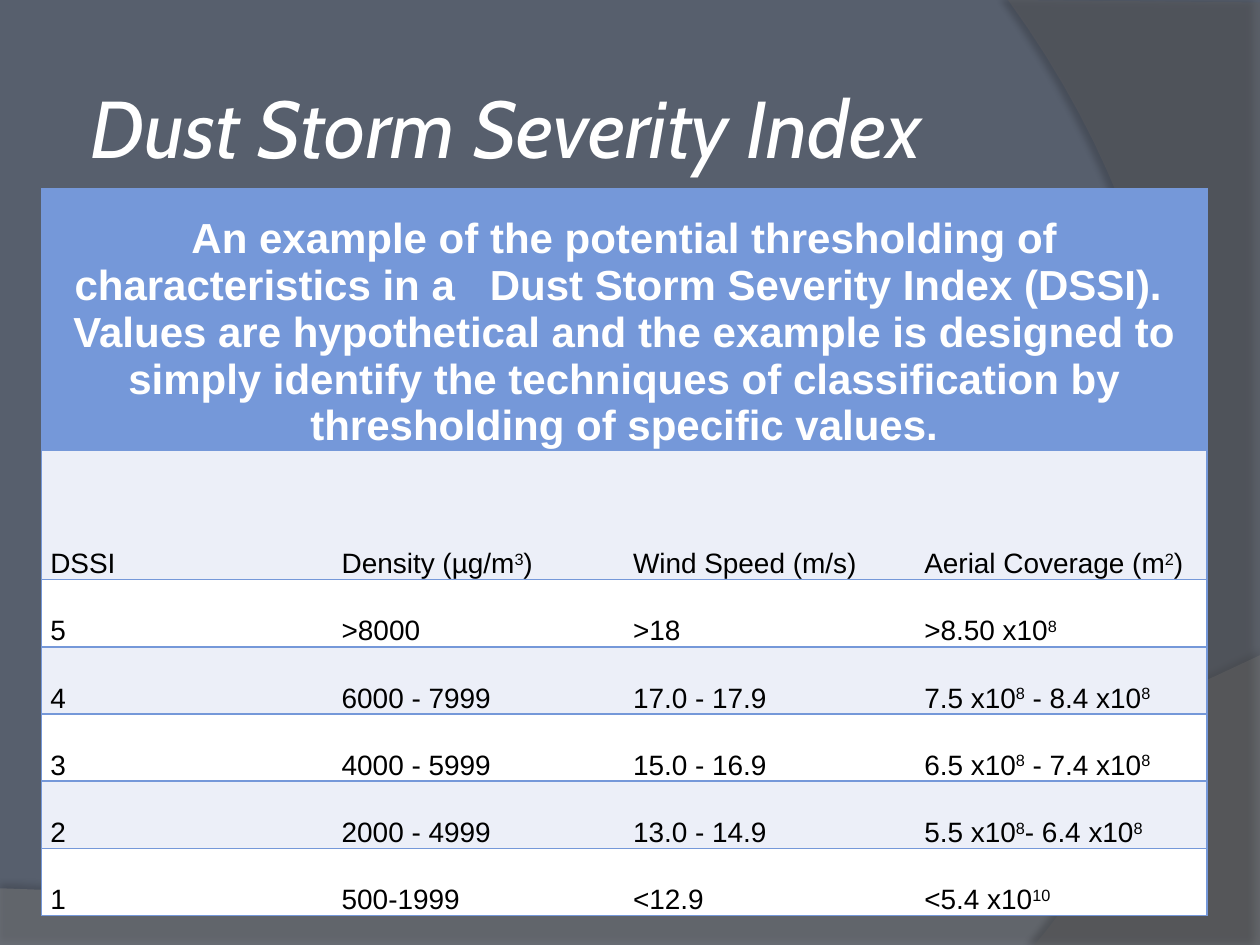
from lxml import etree
from pptx import Presentation
from pptx.dml.color import RGBColor
from pptx.enum.text import MSO_ANCHOR, PP_ALIGN
from pptx.oxml.ns import qn
from pptx.util import Inches, Pt

MIDDLE, BOTTOM = MSO_ANCHOR.MIDDLE, MSO_ANCHOR.BOTTOM
CENTER, LEFT = PP_ALIGN.CENTER, PP_ALIGN.LEFT

COLORS = {
    "background": "575F6D", "wave": "7F7F7F", "arc": "5E5E5E",
    "shadow": "000000", "accent": "7598D9", "band": "ECEFF8",
    "white": "FFFFFF", "text": "000000",
}
NO_STYLE = "{2D5ABB26-0587-4C30-8999-92F81FD0307C}"
HEADING = (
    "An example of the potential thresholding of characteristics in a   "
    "Dust Storm Severity Index (DSSI).  Values are hypothetical and the "
    "example is designed to simply identify the techniques of classification "
    "by thresholding of specific values."
)
ROWS = [
    ["DSSI", "Density (µg/m^3^)", "Wind Speed (m/s)", "Aerial Coverage (m^2^)"],
    ["5", ">8000", ">18", ">8.50 x10^8^"],
    ["4", "6000 - 7999", "17.0 - 17.9", "7.5 x10^8^ - 8.4 x10^8^"],
    ["3", "4000 - 5999", "15.0 - 16.9", "6.5 x10^8^ - 7.4 x10^8^"],
    ["2", "2000 - 4999", "13.0 - 14.9", "5.5 x10^8^- 6.4 x10^8^"],
    ["1", "500-1999", "<12.9", "<5.4 x10^10^"],
]
ROW_HEIGHTS = [2.07, 1.03] + [0.53] * 5


def rgb(name):
    return RGBColor.from_string(COLORS[name])


def add_color(parent, name, alpha=None):
    clr = etree.SubElement(parent, qn("a:srgbClr"), val=COLORS[name])
    if alpha is not None:
        etree.SubElement(clr, qn("a:alpha"), val=str(alpha * 1000))


def bezier(p0, p1, p2, p3, steps=40):
    def at(t):
        u = 1 - t
        weights = (u**3, 3 * u * u * t, 3 * u * t * t, t**3)
        return tuple(sum(w * p[i] for w, p in zip(weights, (p0, p1, p2, p3)))
                     for i in (0, 1))
    return [at(n / steps) for n in range(steps + 1)]


def add_backdrop(s, points, color, alpha, shadow_alpha, dist, angle):
    points = [(Inches(x), Inches(y)) for x, y in points]
    builder = s.shapes.build_freeform(*points[0], scale=1.0)
    builder.add_line_segments(points[1:], close=True)
    sp = builder.convert_to_shape()
    sp.line.fill.background()
    sp.fill.solid()
    sp.fill.fore_color.rgb = rgb(color)
    clr = sp.fill._xPr.find(qn("a:solidFill"))[0]
    etree.SubElement(clr, qn("a:alpha"), val=str(alpha * 1000))
    sp.shadow.inherit = False
    effects = sp._element.spPr.find(qn("a:effectLst"))
    shadow = etree.SubElement(
        effects, qn("a:outerShdw"), blurRad=str(Pt(4)), dist=str(Pt(dist)),
        dir=str(angle * 60000), algn="ctr", rotWithShape="0")
    add_color(shadow, "shadow", shadow_alpha)


def add_run(p, text, size, font, color, bold=False, italic=False):
    r = p.add_run()
    r.text = text
    r.font.size = Pt(size)
    r.font.name = font
    r.font.bold = bold
    r.font.italic = italic
    r.font.color.rgb = rgb(color)
    return r


def add_title(s, text):
    tf = s.shapes.add_textbox(Inches(0.67), Inches(0.42),
                              Inches(9), Inches(1.17)).text_frame
    tf.word_wrap = True
    tf.vertical_anchor = MIDDLE
    tf.margin_left = tf.margin_right = Inches(0.05)
    tf.margin_top = tf.margin_bottom = Inches(0.05)
    add_run(tf.paragraphs[0], text, 46, "Cabin", "white", italic=True)


def add_borders(cell, sides):
    for side in sides:
        ln = etree.SubElement(cell._tc.get_or_add_tcPr(),
                              qn(f"a:ln{side}"), w=str(Pt(1)))
        add_color(etree.SubElement(ln, qn("a:solidFill")), "accent")


def fill_cell(cell, text, fill, sides, size, color, bold, align, spacing):
    cell.vertical_anchor = BOTTOM
    cell.margin_left = cell.margin_right = Inches(0.07)
    cell.margin_top = cell.margin_bottom = 0
    add_borders(cell, sides)
    cell.fill.solid()
    cell.fill.fore_color.rgb = rgb(fill)
    p = cell.text_frame.paragraphs[0]
    p.alignment = align
    p.line_spacing = spacing
    p.space_after = Pt(10)
    for i, part in enumerate(text.split("^")):
        if part:
            r = add_run(p, part, size, "Arial", color, bold)
            if i % 2:
                r.font._element.set("baseline", "30000")


def add_index_table(s):
    n_cols = len(ROWS[0])
    frame = s.shapes.add_table(len(ROW_HEIGHTS), n_cols, Inches(0.33),
                               Inches(1.5), Inches(9.25), Inches(5.77))
    table = frame.table
    table._tbl.tblPr.find(qn("a:tableStyleId")).text = NO_STYLE
    for row, height in zip(table.rows, ROW_HEIGHTS):
        row.height = Inches(height)
    table.cell(0, 0).merge(table.cell(0, n_cols - 1))
    fill_cell(table.cell(0, 0), HEADING, "accent", "LRTB",
              24, "white", True, CENTER, 1.0)
    for i, values in enumerate(ROWS, 1):
        for j, text in enumerate(values):
            sides = ("L" if j == 0 else "") + ("R" if j == n_cols - 1 else "") + "TB"
            fill_cell(table.cell(i, j), text, "band" if i % 2 else "white",
                      sides, 16, "text", False, LEFT, 2.0)


def main():
    prs = Presentation()
    prs.slide_width, prs.slide_height = Inches(10), Inches(7.5)
    s = prs.slides.add_slide(prs.slide_layouts[6])
    s.background.fill.solid()
    s.background.fill.fore_color.rgb = rgb("background")
    wave = [(0, 7.51), (10, 7.51)] + bezier(
        (10, 5.2), (5.59, 7.29), (3.91, 7.19), (0, 7.05))
    arc = [(10, 0.02), (10, 7.5)] + bezier(
        (8.21, 7.5), (9.35, 6.19), (10.18, 3), (8, 0))
    add_backdrop(s, wave, "wave", 45, 35, 3.5, 270)
    add_backdrop(s, arc, "arc", 40, 45, 4, 180)
    add_title(s, "Dust Storm Severity Index")
    add_index_table(s)
    prs.save("out.pptx")


if __name__ == "__main__":
    main()
